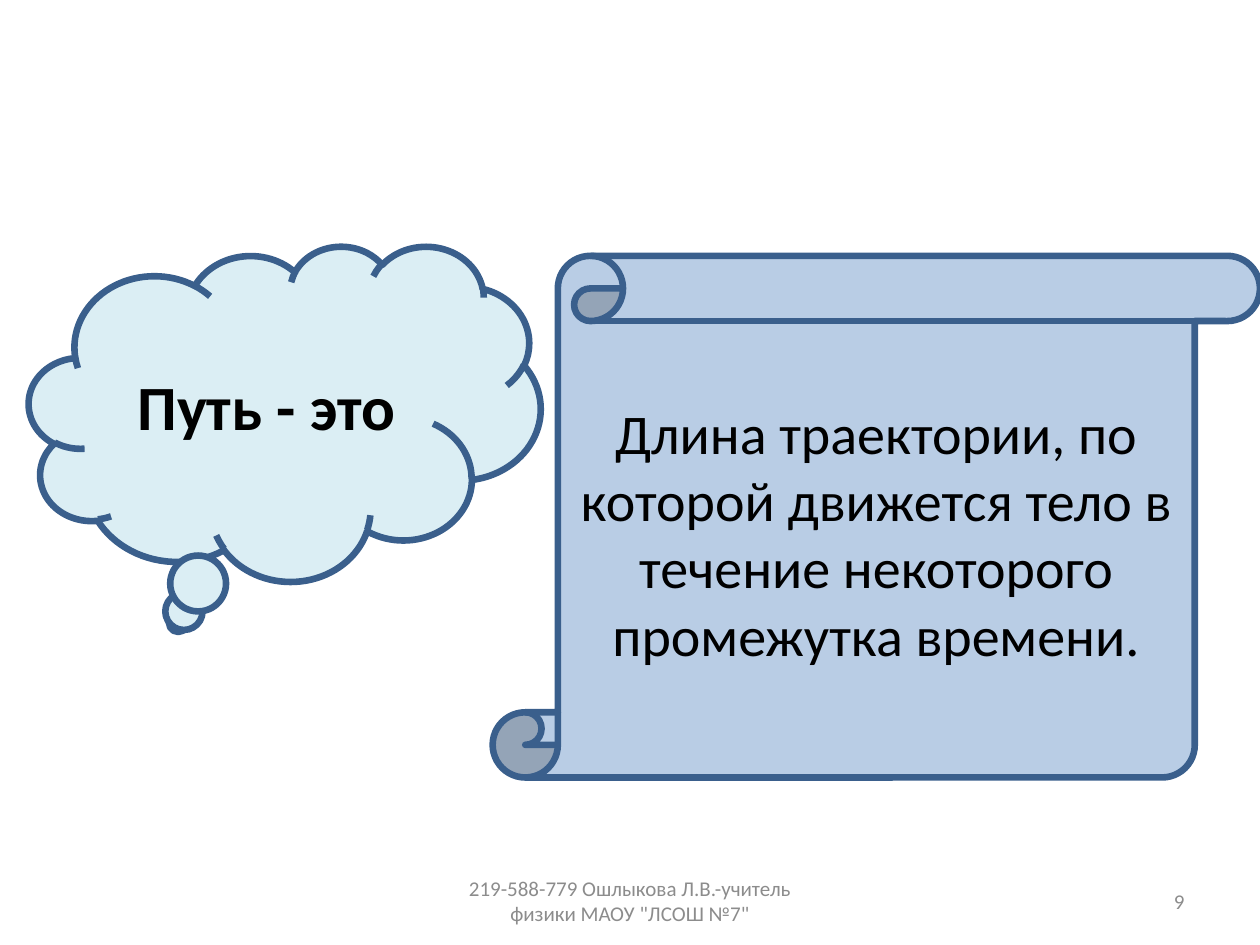
import pptx
import pptx.util
from pptx.dml.color import RGBColor
from pptx.enum.shapes import MSO_SHAPE
from pptx.enum.text import MSO_ANCHOR, PP_ALIGN

Pt = pptx.util.Pt

THEME = {
    "font": "Calibri",
    "ink": "000000", "muted": "8C8C8C", "outline": "3A5F8C",
    "cloud": "DBEEF4", "scroll": "B9CDE5",
    "term": 36, "body": 32, "footer": 12, "line": 3.78,
}

# Boxes are left, top, width, height in points.
DEFINITION = [
    (MSO_SHAPE.CLOUD_CALLOUT, (16.6, 140.4, 292.3, 191.5), "cloud",
     "Путь - это", "term", True),
    (MSO_SHAPE.VERTICAL_SCROLL, (281.5, 146.2, 438.5, 298.1), "scroll",
     "Длина траектории, по которой движется тело в течение некоторого "
     "промежутка времени.", "body", False),
]
FOOTER = [
    ((516, 500.5, 168, 28.75), "9", PP_ALIGN.RIGHT),
    ((246, 500.5, 228, 28.75),
     "219-588-779 Ошлыкова Л.В.-учитель физики МАОУ \"ЛСОШ №7\"",
     PP_ALIGN.CENTER),
]


def color(name):
    return RGBColor.from_string(THEME[name])


def write(shape, text, size, ink, align, bold=False):
    tf = shape.text_frame
    tf.word_wrap = True
    tf.vertical_anchor = MSO_ANCHOR.MIDDLE
    p = tf.paragraphs[0]
    p.text = text
    p.alignment = align
    p.font.name = THEME["font"]
    p.font.size = Pt(THEME[size])
    p.font.bold = bold
    p.font.color.rgb = color(ink)


def main():
    prs = pptx.Presentation()
    prs.slide_width, prs.slide_height = Pt(720), Pt(540)
    s = prs.slides.add_slide(prs.slide_layouts[6])

    for kind, box, fill, text, size, bold in DEFINITION:
        sp = s.shapes.add_shape(kind, *map(Pt, box))
        sp.shadow.inherit = False
        sp.fill.solid()
        sp.fill.fore_color.rgb = color(fill)
        sp.line.color.rgb = color("outline")
        sp.line.width = Pt(THEME["line"])
        write(sp, text, size, "ink", PP_ALIGN.CENTER, bold)

    for box, text, align in FOOTER:
        sp = s.shapes.add_textbox(*map(Pt, box))
        write(sp, text, "footer", "muted", align)

    prs.save("out.pptx")


if __name__ == "__main__":
    main()
